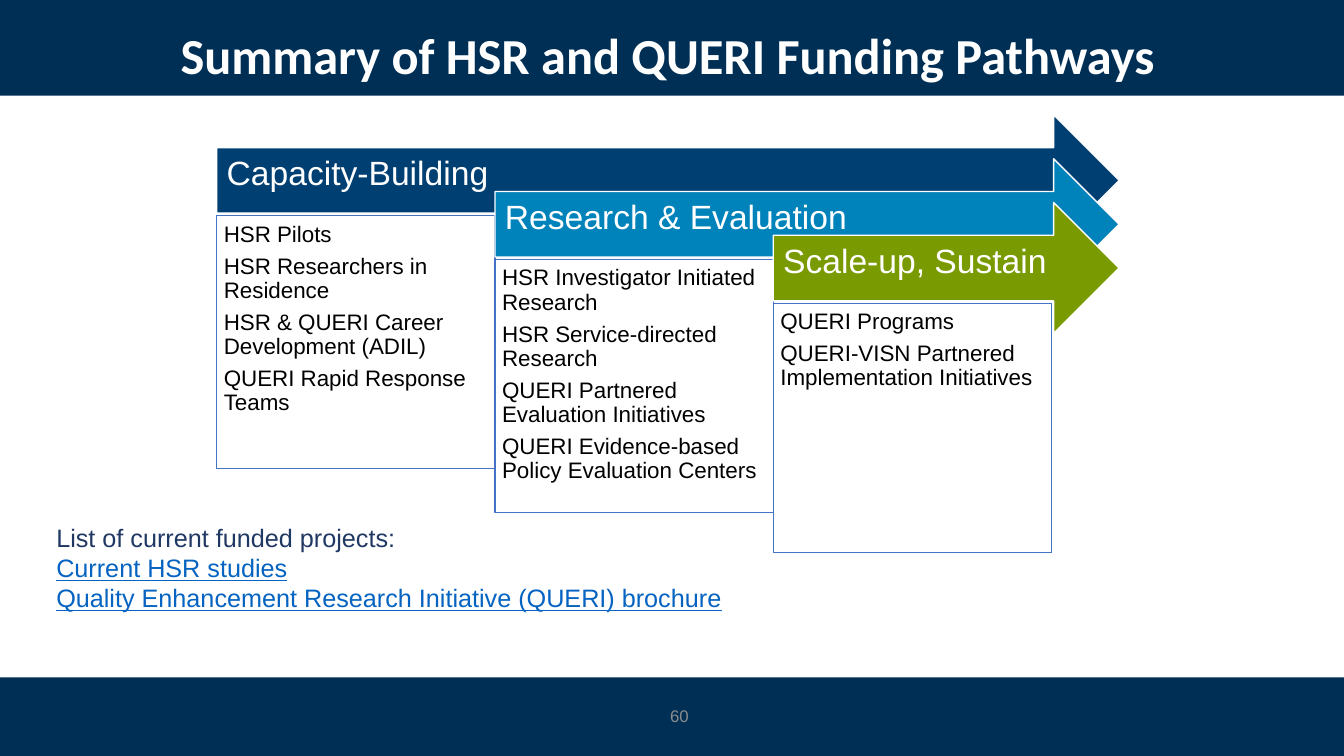
from dataclasses import dataclass

from pptx import Presentation
from pptx.dml.color import RGBColor
from pptx.enum.shapes import MSO_SHAPE
from pptx.enum.text import MSO_ANCHOR, PP_ALIGN
from pptx.util import Inches, Pt

RECTANGLE, RIGHT_ARROW = MSO_SHAPE.RECTANGLE, MSO_SHAPE.RIGHT_ARROW
TOP, MIDDLE = MSO_ANCHOR.TOP, MSO_ANCHOR.MIDDLE
LEFT, CENTER, RIGHT = PP_ALIGN.LEFT, PP_ALIGN.CENTER, PP_ALIGN.RIGHT

NAVY = RGBColor(0x00, 0x2F, 0x56)
DEEP_BLUE = RGBColor(0x00, 0x3F, 0x72)
BRIGHT_BLUE = RGBColor(0x00, 0x82, 0xBA)
GREEN = RGBColor(0x7A, 0x9A, 0x01)
OUTLINE_BLUE = RGBColor(0x44, 0x72, 0xC4)
INTRO_BLUE = RGBColor(0x20, 0x38, 0x64)
LINK_BLUE = RGBColor(0x05, 0x63, 0xC1)
GREY = RGBColor(0x8C, 0x8C, 0x8C)
WHITE = RGBColor(0xFF, 0xFF, 0xFF)
BLACK = RGBColor(0x00, 0x00, 0x00)

SLIDE_WIDTH, SLIDE_HEIGHT = 13.33, 7.5

# Pathways step right by one column and down by one row.
GRID_LEFT, GRID_TOP = 2.15, 1.14
COLUMN, ROW = 2.76, 0.435
ARROW_TIP, ARROW_HEIGHT = 11.1, 1.3
PANEL_DROP = 1.0


@dataclass(frozen=True)
class Box:
    left: float
    top: float
    width: float
    height: float

    def emu(self) -> list[int]:
        return [Inches(v) for v in (self.left, self.top, self.width, self.height)]


@dataclass(frozen=True)
class Style:
    size: float
    color: RGBColor
    name: str = "Arial"
    bold: bool = False
    underline: bool = False
    align: PP_ALIGN = LEFT
    line_spacing: float = 1.0
    space_after: float = 0


@dataclass(frozen=True)
class Pathway:
    stage: str
    color: RGBColor
    programs: tuple[str, ...]
    panel_height: float = 2.51


TITLE = Style(36, WHITE, "Calibri", bold=True, align=CENTER, line_spacing=0.9)
STAGE = Style(24, WHITE, line_spacing=0.9)
PROGRAM = Style(16, BLACK, line_spacing=0.9, space_after=5.6)
INTRO = Style(18, INTRO_BLUE)
LINK = Style(18, LINK_BLUE, underline=True)
PAGE_NUMBER = Style(12, GREY, align=RIGHT)

TEXT_MARGINS = (0.1, 0.05, 0.1, 0.05)
STAGE_MARGINS = (0.1, 0.1, 0.28, 0.21)
PANEL_MARGINS = (0.07,) * 4

PATHWAYS = (
    Pathway("Capacity-Building", DEEP_BLUE, (
        "HSR Pilots",
        "HSR Researchers in Residence",
        "HSR & QUERI Career Development (ADIL)",
        "QUERI Rapid Response Teams",
    )),
    Pathway("Research & Evaluation", BRIGHT_BLUE, (
        "HSR Investigator Initiated Research",
        "HSR Service-directed Research",
        "QUERI Partnered Evaluation Initiatives",
        "QUERI Evidence-based Policy Evaluation Centers",
    )),
    Pathway("Scale-up, Sustain", GREEN, (
        "QUERI Programs",
        "QUERI-VISN Partnered Implementation Initiatives",
    ), panel_height=2.47),
)


def write(shape, lines: list[tuple[str, Style]], anchor=TOP, margins=TEXT_MARGINS) -> None:
    """Fill a shape with one styled paragraph per line."""
    frame = shape.text_frame
    sides = ("margin_left", "margin_top", "margin_right", "margin_bottom")
    layout = {"word_wrap": True, "vertical_anchor": anchor}
    layout.update(zip(sides, map(Inches, margins)))
    for attribute, value in layout.items():
        setattr(frame, attribute, value)

    for index, (words, style) in enumerate(lines):
        paragraph = frame.add_paragraph() if index else frame.paragraphs[0]
        spacing = {"alignment": style.align, "line_spacing": style.line_spacing,
                   "space_before": Pt(0), "space_after": Pt(style.space_after)}
        for attribute, value in spacing.items():
            setattr(paragraph, attribute, value)
        run = paragraph.add_run()
        run.text = words
        lettering = {"name": style.name, "size": Pt(style.size),
                     "bold": style.bold, "underline": style.underline}
        for attribute, value in lettering.items():
            setattr(run.font, attribute, value)
        run.font.color.rgb = style.color


def add_filled(slide, preset: MSO_SHAPE, box: Box, fill: RGBColor,
               outline: RGBColor | None = None):
    shape = slide.shapes.add_shape(preset, *box.emu())
    shape.shadow.inherit = False
    shape.fill.solid()
    shape.fill.fore_color.rgb = fill
    if outline is None:
        shape.line.fill.background()
    else:
        shape.line.color.rgb = outline
        shape.line.width = Pt(1)
    return shape


def add_text(slide, box: Box, lines: list[tuple[str, Style]], anchor=TOP) -> None:
    write(slide.shapes.add_textbox(*box.emu()), lines, anchor)


def add_pathway(slide, step: int, pathway: Pathway) -> None:
    """Draw a stage arrow and the panel of programs hanging below it."""
    left, top = GRID_LEFT + step * COLUMN, GRID_TOP + step * ROW
    arrow = add_filled(slide, RIGHT_ARROW,
                       Box(left, top, ARROW_TIP - left, ARROW_HEIGHT),
                       pathway.color, WHITE)
    write(arrow, [(pathway.stage, STAGE)], MIDDLE, STAGE_MARGINS)
    panel = add_filled(slide, RECTANGLE,
                       Box(left, top + PANEL_DROP, COLUMN, pathway.panel_height),
                       WHITE, OUTLINE_BLUE)
    write(panel, [(program, PROGRAM) for program in pathway.programs],
          margins=PANEL_MARGINS)


def main() -> None:
    deck = Presentation()
    deck.slide_width, deck.slide_height = Inches(SLIDE_WIDTH), Inches(SLIDE_HEIGHT)
    slide = deck.slides.add_slide(deck.slide_layouts[6])

    for band_top, band_height in ((0, 0.95), (6.72, 0.8)):
        add_filled(slide, RECTANGLE, Box(0, band_top, SLIDE_WIDTH, band_height), NAVY)
    add_text(slide, Box(0.34, 0.16, 12.57, 0.83),
             [("Summary of HSR and QUERI Funding Pathways", TITLE)], MIDDLE)
    add_text(slide, Box(0.46, 5.13, 7.55, 1.01), [
        ("List of current funded projects:", INTRO),
        ("Current HSR studies", LINK),
        ("Quality Enhancement Research Initiative (QUERI) brochure", LINK),
    ])
    for step, pathway in enumerate(PATHWAYS):
        add_pathway(slide, step, pathway)
    add_text(slide, Box(3.93, 6.95, 3, 0.4), [("60", PAGE_NUMBER)])

    deck.save("out.pptx")


if __name__ == "__main__":
    main()
